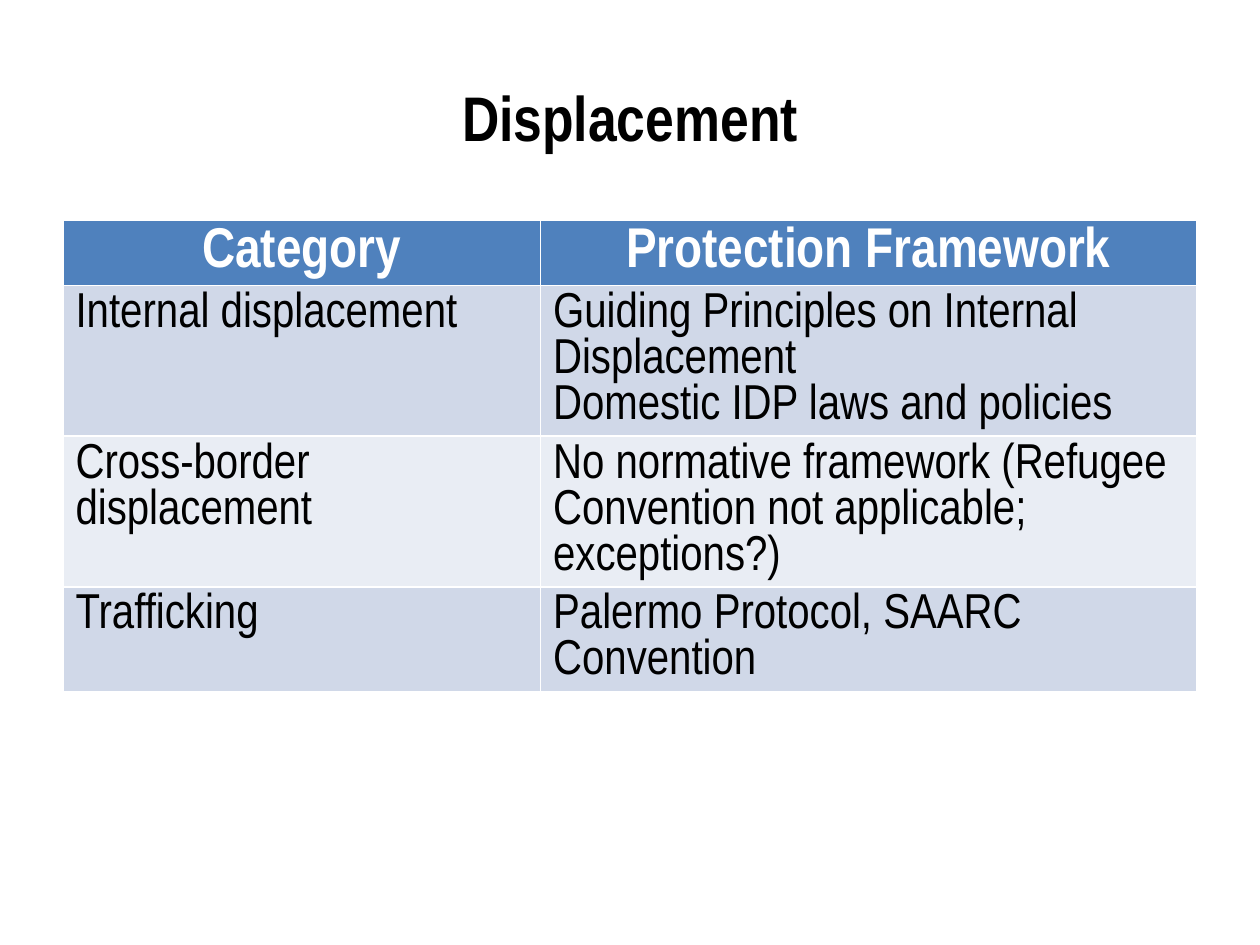
from pptx import Presentation
from pptx.dml.color import RGBColor
from pptx.enum.text import MSO_ANCHOR, PP_ALIGN
from pptx.util import Pt

CENTER, LEFT = PP_ALIGN.CENTER, PP_ALIGN.LEFT
MIDDLE = MSO_ANCHOR.MIDDLE
FONT = "Arial Narrow"
BLACK = RGBColor(0x00, 0x00, 0x00)
WHITE = RGBColor(0xFF, 0xFF, 0xFF)
HEADER_BLUE = RGBColor(0x4F, 0x81, 0xBD)
BAND_FILLS = (RGBColor(0xD0, 0xD8, 0xE8), RGBColor(0xE9, 0xED, 0xF4))

TITLE_ONLY = 5
TITLE_BOX = (36, 21.6, 648, 90)
TABLE_BOX = (36, 126, 648, 118)
COLUMN_WIDTHS = (272.9, 375.1)

# Each cell is a list of paragraphs.
HEADER = (["Category"], ["Protection Framework"])
FRAMEWORKS = (
    (["Internal displacement"],
     ["Guiding Principles on Internal Displacement",
      "Domestic IDP laws and policies"]),
    (["Cross-border displacement"],
     ["No normative framework (Refugee Convention not applicable; exceptions?)"]),
    (["Trafficking"], ["Palermo Protocol, SAARC Convention"]),
)


def write_paragraphs(text_frame, lines, size, color, bold, alignment):
    for index, line in enumerate(lines):
        paragraph = text_frame.add_paragraph() if index else text_frame.paragraphs[0]
        paragraph.alignment = alignment
        run = paragraph.add_run()
        run.text = line
        run.font.name = FONT
        run.font.size = Pt(size)
        run.font.bold = bold
        run.font.color.rgb = color


def add_title(slide, box, text):
    title = slide.shapes.title
    title.left, title.top, title.width, title.height = map(Pt, box)
    title.text_frame.vertical_anchor = MIDDLE
    write_paragraphs(title.text_frame, [text], 36, BLACK, True, CENTER)


def add_framework_table(slide, box):
    """Add the table; its rows grow to fit their text."""
    rows = (HEADER, *FRAMEWORKS)
    table = slide.shapes.add_table(len(rows), len(HEADER), *map(Pt, box)).table
    for column, width in zip(table.columns, COLUMN_WIDTHS):
        column.width = Pt(width)
    for row_index, row in enumerate(rows):
        if row_index == 0:
            fill, style = HEADER_BLUE, (32, WHITE, True, CENTER)
        else:
            fill = BAND_FILLS[(row_index - 1) % len(BAND_FILLS)]
            style = (28, BLACK, False, LEFT)
        for column_index, lines in enumerate(row):
            cell = table.cell(row_index, column_index)
            cell.fill.solid()
            cell.fill.fore_color.rgb = fill
            write_paragraphs(cell.text_frame, lines, *style)


def main():
    presentation = Presentation()
    presentation.slide_width, presentation.slide_height = Pt(720), Pt(540)
    slide = presentation.slides.add_slide(presentation.slide_layouts[TITLE_ONLY])
    add_title(slide, TITLE_BOX, "Displacement")
    add_framework_table(slide, TABLE_BOX)
    presentation.save("out.pptx")


if __name__ == "__main__":
    main()
